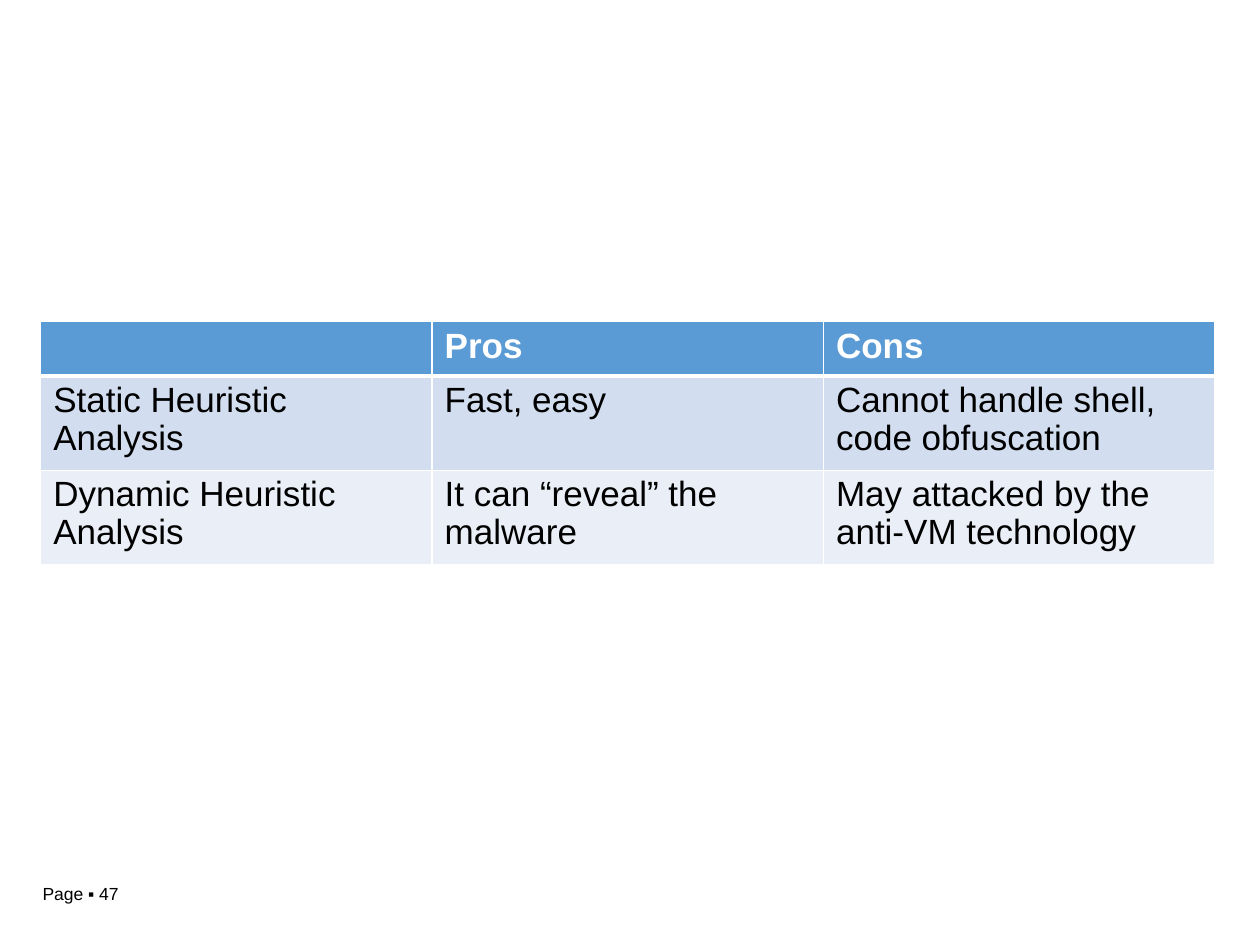
from lxml import etree
from pptx import Presentation
from pptx import util as u
from pptx.dml.color import RGBColor
from pptx.oxml.ns import qn

COLORS = {"header": "5B9BD5", "odd": "D2DEEF", "even": "EAEFF7",
          "white": "FFFFFF", "black": "000000"}
ROWS = [
    ["", "Pros", "Cons"],
    ["Static Heuristic Analysis", "Fast, easy", "Cannot handle shell, code obfuscation"],
    ["Dynamic Heuristic Analysis", "It can “reveal” the malware", "May attacked by the anti-VM technology"],
]


class SlideBuilder:
    """Holds the text style and the current slide, and adds elements to it."""

    def __init__(self, slide, font="Arial"):
        self.slide = slide
        self.font = font

    def style(self, paragraph, size, color, bold=False):
        font = paragraph.font
        font.name, font.size, font.bold = self.font, u.Pt(size), bold
        font.color.rgb = RGBColor.from_string(COLORS[color])

    def text(self, left, top, width, height, words, size):
        box = self.slide.shapes.add_textbox(*map(u.Cm, (left, top, width, height)))
        box.text_frame.word_wrap = True
        paragraph = box.text_frame.paragraphs[0]
        paragraph.text = words
        self.style(paragraph, size, "black")

    def borders(self, cell, bottom):
        properties = cell._tc.get_or_add_tcPr()
        widths = {"a:lnL": 1, "a:lnR": 1, "a:lnT": 1, "a:lnB": bottom}
        for position, (tag, width) in enumerate(widths.items()):
            line = etree.Element(qn(tag), w=str(u.Pt(width)))
            fill = etree.SubElement(line, qn("a:solidFill"))
            etree.SubElement(fill, qn("a:srgbClr"), val=COLORS["white"])
            properties.insert(position, line)

    def table(self, left, top, column_width, row_heights, rows, size):
        columns = len(rows[0])
        table = self.slide.shapes.add_table(
            len(rows), columns, u.Cm(left), u.Cm(top),
            u.Cm(column_width * columns), u.Cm(sum(row_heights))).table
        for column in table.columns:
            column.width = u.Cm(column_width)
        for row_index, words in enumerate(rows):
            table.rows[row_index].height = u.Cm(row_heights[row_index])
            header = row_index == 0
            fill = "header" if header else "odd" if row_index % 2 else "even"
            for column_index, word in enumerate(words):
                cell = table.cell(row_index, column_index)
                cell.fill.solid()
                cell.fill.fore_color.rgb = RGBColor.from_string(COLORS[fill])
                self.borders(cell, 3 if header or row_index == 0 else 1)
                if row_index == 1:
                    cell._tc.tcPr.find(qn("a:lnT")).set("w", str(u.Pt(3)))
                paragraph = cell.text_frame.paragraphs[0]
                paragraph.text = word
                paragraph.line_spacing = 0.97
                self.style(paragraph, size, "white" if header else "black", header)


def main():
    presentation = Presentation()
    presentation.slide_width, presentation.slide_height = u.Cm(25.4), u.Cm(19.05)
    builder = SlideBuilder(presentation.slides.add_slide(presentation.slide_layouts[6]))
    builder.text(0.61, 17.68, 3.73, 0.69, "Page ▪ 47", 10)
    builder.table(0.82, 6.48, 7.89, [1.04, 1.82, 1.82], ROWS, 20)
    presentation.save("out.pptx")


if __name__ == "__main__":
    main()
